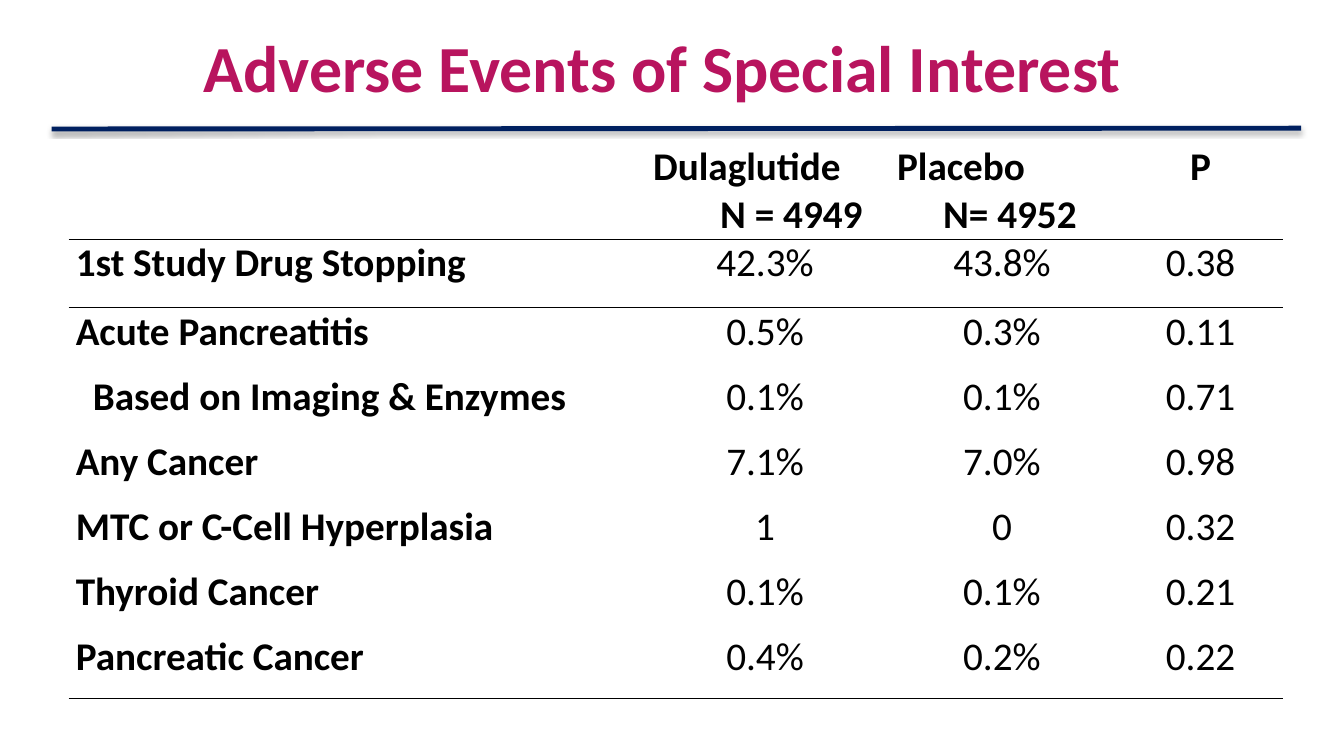
from lxml.etree import SubElement
from pptx import Presentation
from pptx.dml.color import RGBColor
from pptx.enum.shapes import MSO_CONNECTOR as Connector
from pptx.enum.text import MSO_ANCHOR as Anchor, PP_ALIGN as Align
from pptx.oxml import parse_xml
from pptx.oxml.ns import nsdecls, qn
from pptx.util import Cm, Pt

TITLE = "Adverse Events of Special Interest"
GROUPS = [
    ("Dulaglutide", "N = 4949", 0.05, 1.74),
    ("Placebo", "N= 4952", 0.1, 1.26),
]
EVENTS = [
    ("1st Study Drug Stopping", "42.3%", "43.8%", "0.38"),
    ("Acute Pancreatitis", "0.5%", "0.3%", "0.11"),
    ("Based on Imaging & Enzymes", "0.1%", "0.1%", "0.71"),
    ("Any Cancer", "7.1%", "7.0%", "0.98"),
    ("MTC or C-Cell Hyperplasia", "1", "0", "0.32"),
    ("Thyroid Cancer", "0.1%", "0.1%", "0.21"),
    ("Pancreatic Cancer", "0.4%", "0.2%", "0.22"),
]
SUB_EVENT = "Based on Imaging & Enzymes"
COLORS = {"title": "B8145E", "rule": "002060", "text": "000000"}
FONT = "Calibri"
COLUMN_WIDTHS = [14.5, 6.1, 5.84, 4.17]
ROW_HEIGHTS = [2.41, 1.73] + [1.64] * (len(EVENTS) - 1)
RULED_ROWS = (0, 1, len(EVENTS))
NO_STYLE = "{2D5ABB26-0587-4C30-8999-92F81FD0307C}"


def add_run(paragraph, text, size, bold, color):
    run = paragraph.add_run()
    run.text = text
    run.font.name = FONT
    run.font.size = Pt(size)
    run.font.bold = bold
    run.font.color.rgb = RGBColor.from_string(COLORS[color])


def set_indent(paragraph, left, first):
    properties = paragraph._p.get_or_add_pPr()
    properties.set("marL", str(Cm(left)))
    properties.set("indent", str(Cm(first - left)))


def add_bottom_border(cell):
    border = parse_xml(
        f'<a:lnB {nsdecls("a")} w="{Pt(1)}"><a:solidFill>'
        f'<a:srgbClr val="{COLORS["text"]}"/></a:solidFill></a:lnB>')
    cell._tc.get_or_add_tcPr().insert(0, border)


def add_title(slide):
    box = slide.shapes.add_textbox(Cm(4.88), Cm(0.2), Cm(28.52), Cm(3.18))
    frame = box.text_frame
    frame.word_wrap = True
    frame.vertical_anchor = Anchor.MIDDLE
    paragraph = frame.paragraphs[0]
    paragraph.line_spacing = 0.9
    add_run(paragraph, TITLE, 47, True, "title")


def add_rule(slide):
    rule = slide.shapes.add_connector(
        Connector.STRAIGHT, Cm(1.3), Cm(3.25), Cm(32.79), Cm(3.23))
    rule.line.color.rgb = RGBColor.from_string(COLORS["rule"])
    rule.line.width = Pt(3.5)
    effects = SubElement(rule._element.spPr, qn("a:effectLst"))
    shadow = SubElement(effects, qn("a:outerShdw"), blurRad=str(Pt(3.1)),
                        dist=str(Pt(1.8)), dir="5400000", rotWithShape="0")
    color = SubElement(shadow, qn("a:srgbClr"), val="000000")
    SubElement(color, qn("a:alpha"), val="35000")


def fill_header(table):
    for column, (name, count, first, left) in enumerate(GROUPS, 1):
        paragraph = table.cell(0, column).text_frame.paragraphs[0]
        set_indent(paragraph, left, first)
        add_run(paragraph, name, 28, True, "text")
        paragraph.add_line_break()
        add_run(paragraph, count, 28, True, "text")
    paragraph = table.cell(0, 3).text_frame.paragraphs[0]
    paragraph.alignment = Align.CENTER
    add_run(paragraph, "P", 28, True, "text")


def fill_events(table):
    for row, event in enumerate(EVENTS, 1):
        for column, text in enumerate(event):
            paragraph = table.cell(row, column).text_frame.paragraphs[0]
            if column:
                paragraph.alignment = Align.CENTER
            if text == SUB_EVENT:
                set_indent(paragraph, 0.43, 0.43)
            add_run(paragraph, text, 28, column == 0, "text")


def add_event_table(slide):
    frame = slide.shapes.add_table(
        len(ROW_HEIGHTS), len(COLUMN_WIDTHS), Cm(1.73), Cm(3.61),
        Cm(sum(COLUMN_WIDTHS)), Cm(sum(ROW_HEIGHTS)))
    table = frame.table
    table.first_row = table.horz_banding = False
    table._tbl.tblPr.find(qn("a:tableStyleId")).text = NO_STYLE
    for column, width in zip(table.columns, COLUMN_WIDTHS):
        column.width = Cm(width)
    for index, height in enumerate(ROW_HEIGHTS):
        table.rows[index].height = Cm(height)
        for cell in table.rows[index].cells:
            cell.fill.background()
            cell.margin_left = cell.margin_right = Cm(0.18)
            cell.margin_top = cell.margin_bottom = 0
            if index in RULED_ROWS:
                add_bottom_border(cell)
    fill_header(table)
    fill_events(table)


def main():
    presentation = Presentation()
    presentation.slide_width = Cm(33.87)
    presentation.slide_height = Cm(19.05)
    slide = presentation.slides.add_slide(presentation.slide_layouts[6])
    add_rule(slide)
    add_event_table(slide)
    add_title(slide)
    presentation.save("out.pptx")


if __name__ == "__main__":
    main()
